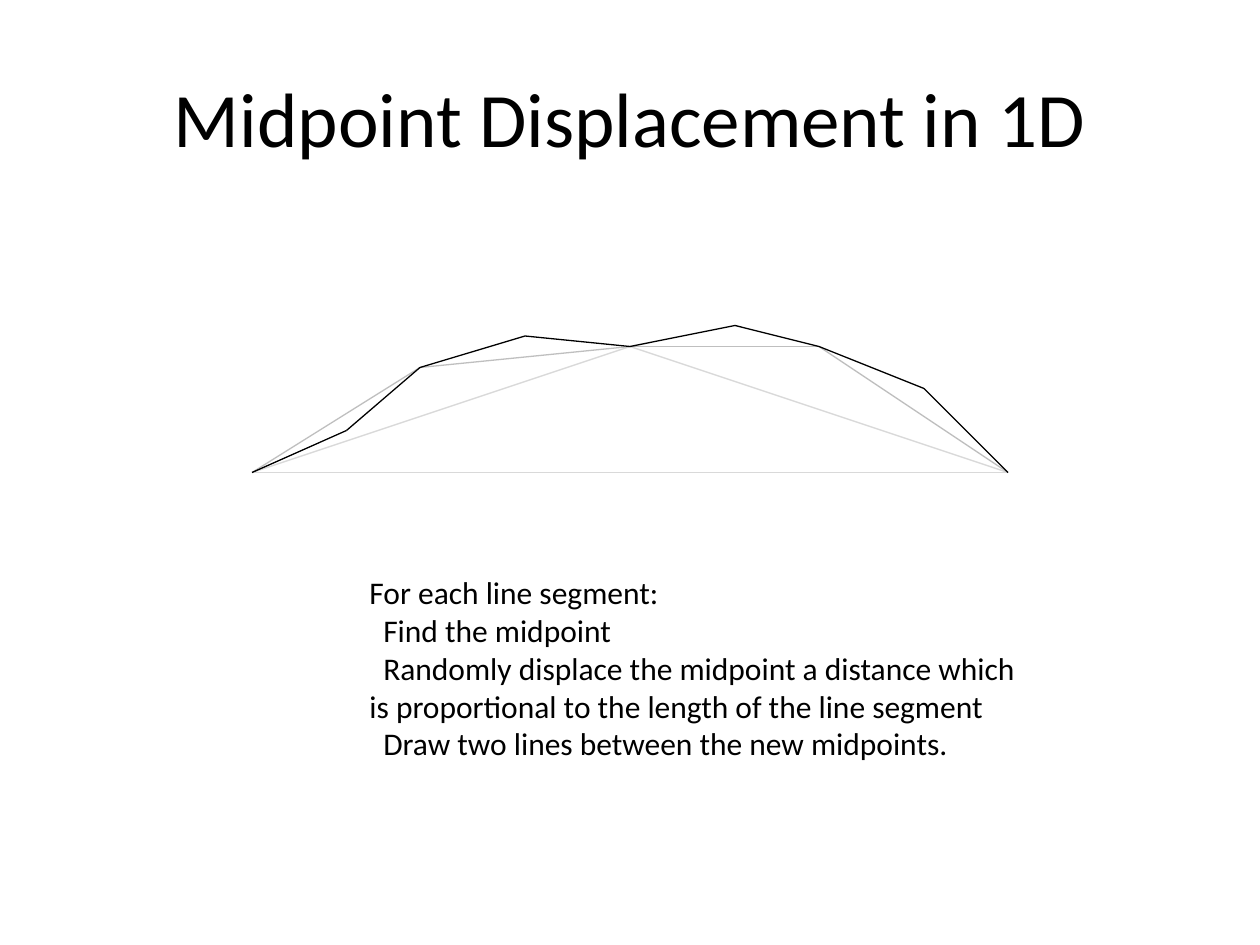
from pptx import Presentation
from pptx.dml.color import RGBColor
from pptx.enum.shapes import MSO_CONNECTOR as Connector
from pptx.enum.text import MSO_ANCHOR as Anchor, PP_ALIGN as Align
from pptx.oxml.ns import qn
from pptx.util import Inches, Pt
from lxml.etree import SubElement

BLACK = RGBColor(0, 0, 0)
GRAY = RGBColor(0xBF, 0xBF, 0xBF)
PALE = RGBColor(0xD9, 0xD9, 0xD9)
UNIT = Inches(1) / 12
FIRST_LINE_INDENT = Inches(0.11)

prs = Presentation()
prs.slide_width, prs.slide_height = Inches(10), Inches(7.5)
slide = prs.slides.add_slide(prs.slide_layouts[6])


def add_text(column, row, columns, rows, lines, size):
    box = slide.shapes.add_textbox(*(round(n * UNIT) for n in (column, row, columns, rows)))
    frame = box.text_frame
    frame.word_wrap = True
    frame.text = "\n".join(lines)
    for paragraph in frame.paragraphs:
        paragraph.font.name = "Calibri"
        paragraph.font.size = Pt(size)
        paragraph.font.color.rgb = BLACK
    return frame


title = add_text(6, 3.6, 108, 15, ["Midpoint Displacement in 1D"], 44)
title.vertical_anchor = Anchor.MIDDLE
title.paragraphs[0].alignment = Align.CENTER

ridge = [(24, 45), (33, 41), (40, 35), (50, 32), (60, 33),
         (70, 31), (78, 33), (88, 37), (96, 45)]
for step, color in [(8, PALE), (4, PALE), (2, GRAY), (1, BLACK)]:
    points = ridge[::step]
    for start, end in zip(points, points[1:]):
        segment = slide.shapes.add_connector(
            Connector.STRAIGHT, *(round(n * UNIT) for n in start + end))
        segment.line.color.rgb = color
        segment.line.width = Pt(0.75)
        SubElement(segment._element.spPr, qn("a:effectLst"))

algorithm = add_text(34, 54, 64, 23, [
    "For each line segment:",
    "Find the midpoint",
    "Randomly displace the midpoint a distance which is proportional "
    "to the length of the line segment",
    "Draw two lines between the new midpoints.",
], 18)
for instruction in algorithm.paragraphs[1:]:
    instruction._p.get_or_add_pPr().set("indent", str(FIRST_LINE_INDENT))

prs.save("out.pptx")
